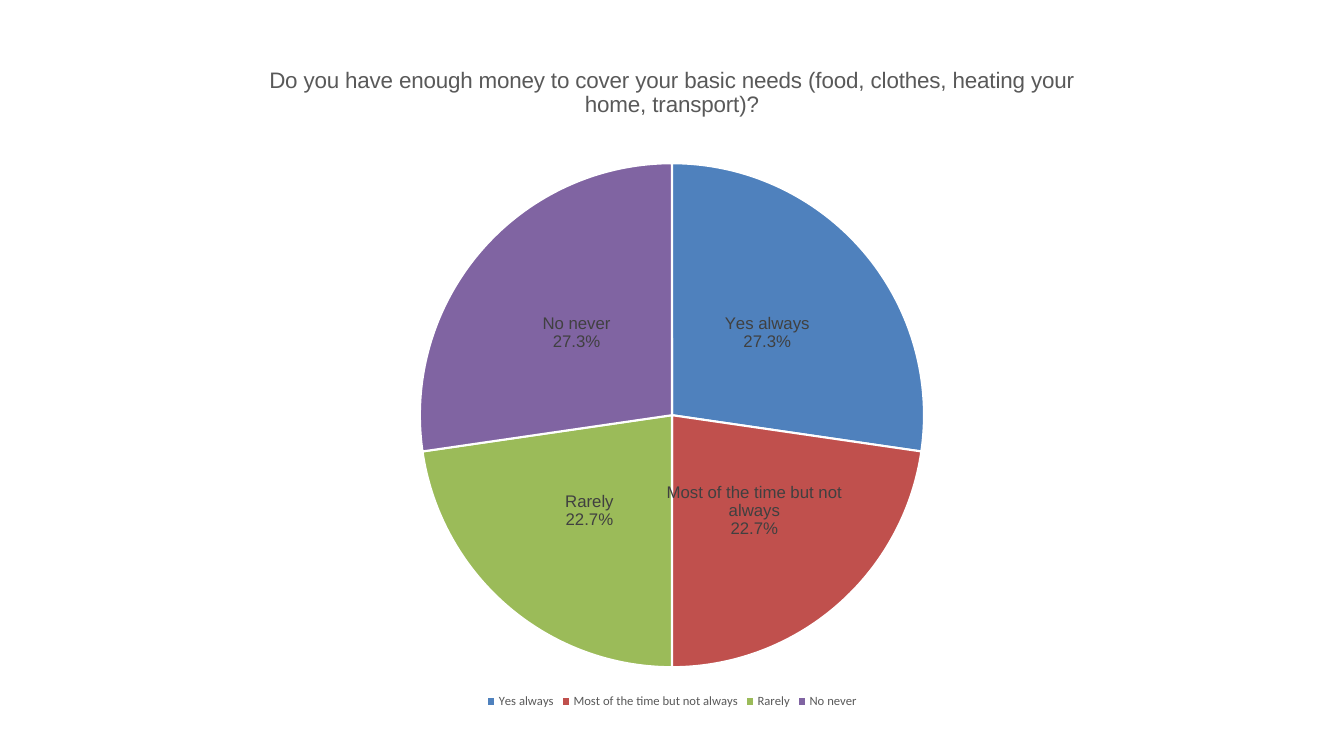
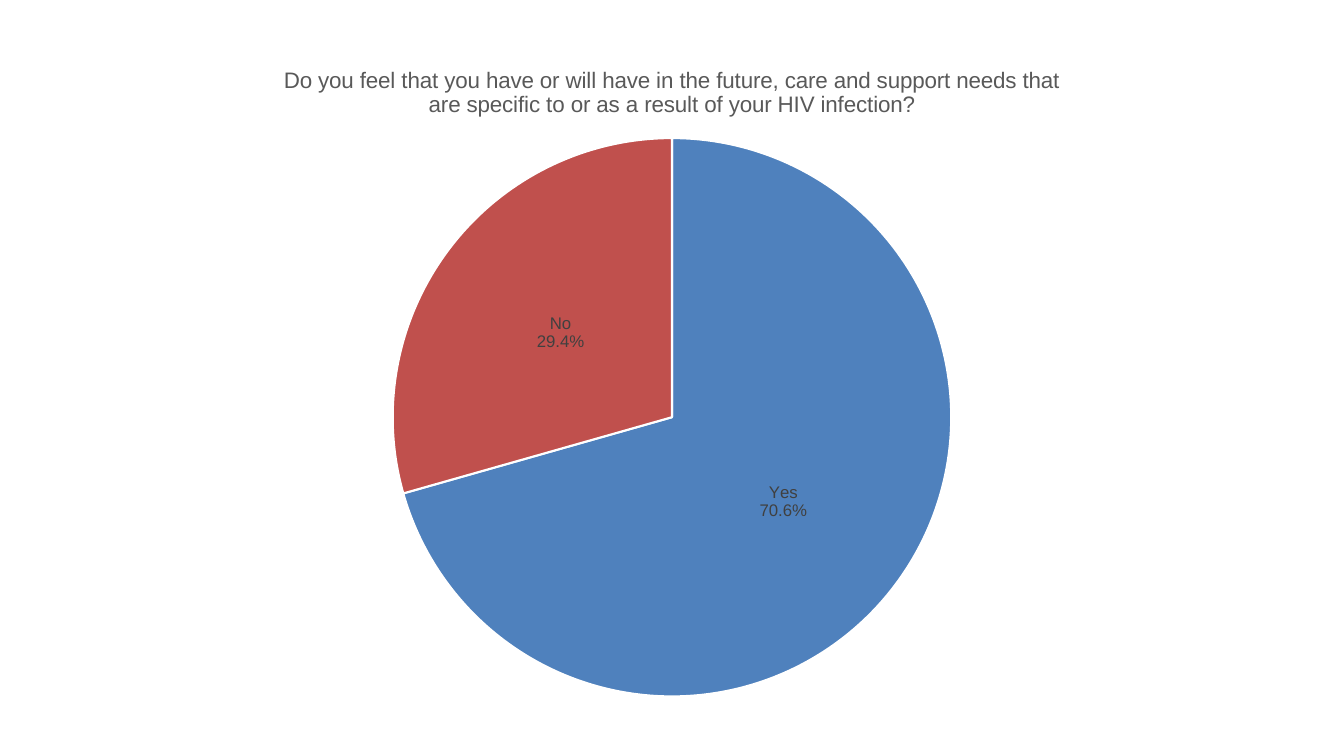
from lxml import etree
from pptx import Presentation
from pptx.chart.data import CategoryChartData
from pptx.dml.color import RGBColor
from pptx.enum.chart import XL_CHART_TYPE, XL_LABEL_POSITION, XL_LEGEND_POSITION
from pptx.oxml.ns import qn
from pptx.util import Inches, Pt

PIE = XL_CHART_TYPE.PIE
CENTER = XL_LABEL_POSITION.CENTER
BOTTOM = XL_LEGEND_POSITION.BOTTOM

COLORS = {"text": "000000", "title": "595959", "label": "404040", "border": "FFFFFF"}
SLICES = {"blue": "4F81BD", "red": "C0504D", "green": "9BBB59", "purple": "8064A2"}

LEFT, TOP, WIDTH, HEIGHT = 1.58, 0.43, 10.17, 6.64

QUESTIONS = [
    {
        "title": "Do you have enough money to cover your basic needs "
                 "(food, clothes, heating your home, transport)?",
        "answers": {
            "Yes always": 27.3,
            "Most of the time but not always": 22.7,
            "Rarely": 22.7,
            "No never": 27.3,
        },
        "pie_top": 1.62,
        "diameter": 5,
        "legend": True,
    },
    {
        "title": "Do you feel that you have or will have in the future, care and support "
                 "needs that are specific to or as a result of your HIV infection?",
        "answers": {"Yes": 70.6, "No": 29.4},
        "pie_top": 1.37,
        "diameter": 5.54,
        "legend": False,
    },
]


def format_font(font, size, color, name="Calibri"):
    font.size = Pt(size)
    font.name = name
    font.bold = False
    font.color.rgb = RGBColor.from_string(COLORS[color])


def place_pie(chart, top, diameter):
    plot_area = chart.plots[0]._element.getparent()
    for old_layout in plot_area.findall(qn("c:layout")):
        plot_area.remove(old_layout)
    layout = etree.Element(qn("c:layout"))
    manual = etree.SubElement(layout, qn("c:manualLayout"))
    settings = {
        "layoutTarget": "inner",
        "xMode": "edge",
        "yMode": "edge",
        "x": (WIDTH - diameter) / 2 / WIDTH,
        "y": (top - TOP) / HEIGHT,
        "w": diameter / WIDTH,
        "h": diameter / HEIGHT,
    }
    for key, value in settings.items():
        etree.SubElement(manual, qn(f"c:{key}")).set("val", str(value))
    plot_area.insert(0, layout)


deck = Presentation()
deck.slide_width = Inches(13.33)
deck.slide_height = Inches(7.5)
blank = deck.slide_layouts[6]

for question in QUESTIONS:
    page = deck.slides.add_slide(blank)
    data = CategoryChartData()
    data.categories = list(question["answers"])
    data.add_series("Series 1", list(question["answers"].values()))
    chart = page.shapes.add_chart(
        PIE, Inches(LEFT), Inches(TOP), Inches(WIDTH), Inches(HEIGHT), data
    ).chart
    format_font(chart.font, 10, "text")

    chart.has_title = True
    chart.chart_title.include_in_layout = False
    para = chart.chart_title.text_frame.paragraphs[0]
    span = para.add_run()
    span.text = question["title"]
    format_font(span.font, 16, "title", "Arial")

    chart.has_legend = question["legend"]
    if question["legend"]:
        chart.legend.position = BOTTOM
        chart.legend.include_in_layout = False
        format_font(chart.legend.font, 9, "title")

    plot = chart.plots[0]
    plot.vary_by_categories = True
    place_pie(chart, question["pie_top"], question["diameter"])

    series = plot.series[0]
    for index, color in zip(range(len(question["answers"])), SLICES.values()):
        piece = series.points[index].format
        piece.fill.solid()
        piece.fill.fore_color.rgb = RGBColor.from_string(color)
        piece.line.color.rgb = RGBColor.from_string(COLORS["border"])
        piece.line.width = Pt(1.5)

    plot.has_data_labels = True
    labels = plot.data_labels
    labels.show_value = False
    labels.show_category_name = True
    labels.show_percentage = True
    labels.number_format = "0.0%"
    labels.number_format_is_linked = False
    labels.position = CENTER
    format_font(labels.font, 12, "label", "Arial")

deck.save("out.pptx")
